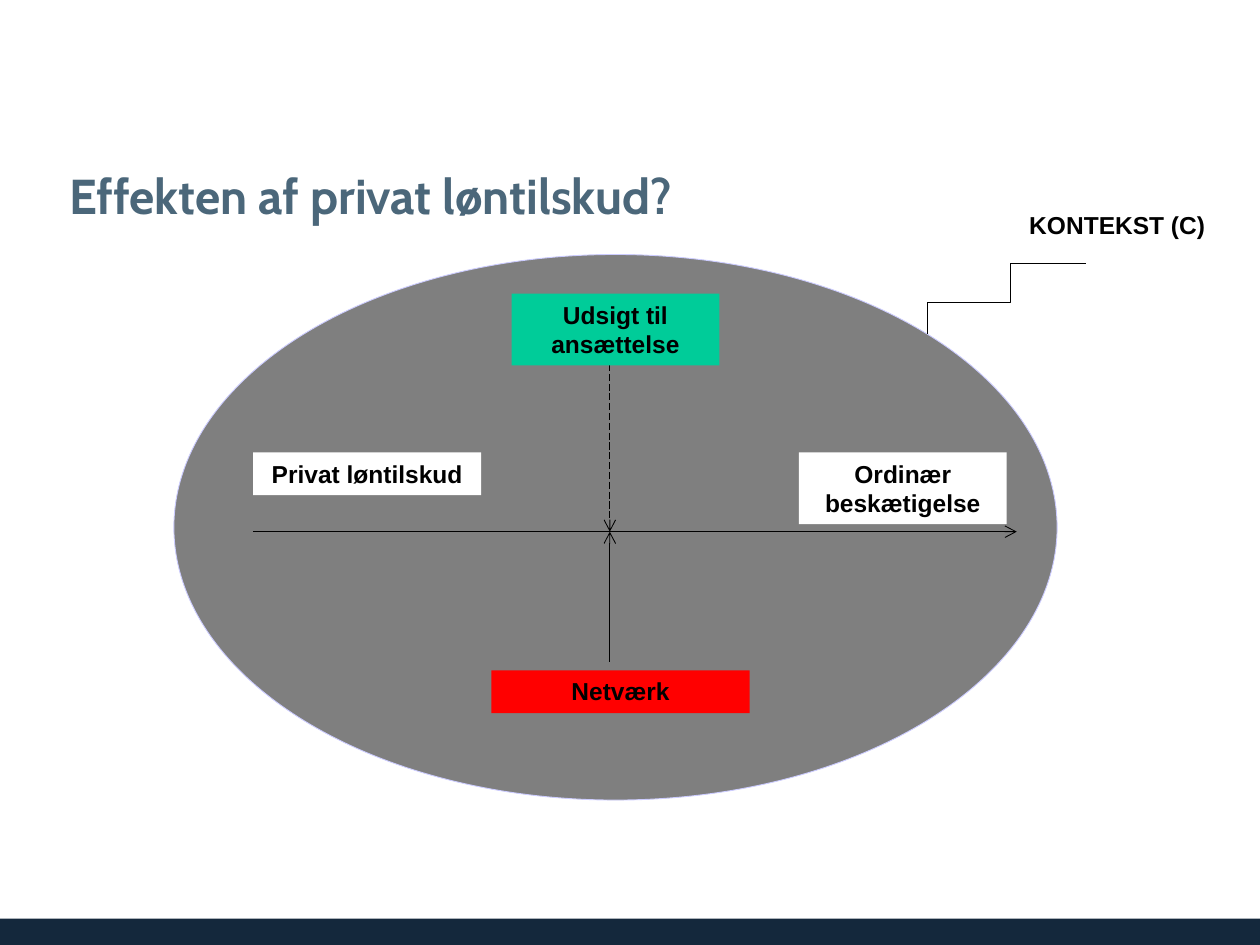
from lxml.etree import SubElement
from pptx import Presentation
from pptx.dml.color import RGBColor
from pptx.enum.dml import MSO_LINE
from pptx.enum.shapes import MSO_CONNECTOR, MSO_SHAPE
from pptx.enum.text import MSO_ANCHOR, MSO_AUTO_SIZE, PP_ALIGN
from pptx.oxml.ns import qn
from pptx.util import Inches, Pt

# Content
TITLE = "Effekten af privat løntilskud?"
AXIS_X, AXIS_Y = 4.84, 4.22
# text, (left, top, width, height), fill, alignment
LABELS = [
    ("Privat løntilskud", (2.01, 3.59, 1.81, 0.34), "FFFFFF", PP_ALIGN.CENTER),
    ("Ordinær\nbeskætigelse", (6.34, 3.59, 1.65, 0.57), "FFFFFF", PP_ALIGN.CENTER),
    ("Netværk", (3.9, 5.32, 2.05, 0.34), "FF0000", PP_ALIGN.CENTER),
    ("Udsigt til ansættelse", (4.06, 2.33, 1.65, 0.57), "00CC99", PP_ALIGN.CENTER),
    ("KONTEKST (C)", (8.07, 1.62, 1.65, 0.34), "FFFFFF", PP_ALIGN.LEFT),
]
# from x, from y, to x, to y, dash
ARROWS = [
    (2.01, AXIS_Y, 8.07, AXIS_Y, None),
    (AXIS_X, 5.25, AXIS_X, AXIS_Y, None),
    (AXIS_X, 2.81, AXIS_X, AXIS_Y, MSO_LINE.LONG_DASH),
]


def color(value):
    return RGBColor.from_string(value)


def add_block(slide, kind, box, fill):
    block = slide.shapes.add_shape(kind, *map(Inches, box))
    block.shadow.inherit = False
    block.fill.solid()
    block.fill.fore_color.rgb = color(fill)
    block.line.fill.background()
    return block


def add_label(slide, text, box, fill, alignment):
    frame = add_block(slide, MSO_SHAPE.RECTANGLE, box, fill).text_frame
    frame.text = text
    frame.word_wrap = True
    frame.vertical_anchor = MSO_ANCHOR.TOP
    frame.auto_size = MSO_AUTO_SIZE.SHAPE_TO_FIT_TEXT
    for paragraph in frame.paragraphs:
        paragraph.alignment = alignment
        font = paragraph.font
        font.name, font.size, font.bold = "Arial", Pt(14), True
        font.color.rgb = color("000000")


def add_line(slide, kind, ends):
    line = slide.shapes.add_connector(kind, *map(Inches, ends))
    line.line.color.rgb = color("000000")
    line.line.width = Pt(0.5)
    SubElement(line._element.spPr, qn("a:effectLst"))
    return line


def add_arrow(slide, *ends, dash):
    arrow = add_line(slide, MSO_CONNECTOR.STRAIGHT, ends)
    if dash:
        arrow.line.dash_style = dash
    SubElement(arrow.line._get_or_add_ln(), qn("a:tailEnd"), type="arrow")


def add_context_line(slide):
    # Four-part elbow, turned a quarter so that it leaves the ellipse upwards
    elbow = add_line(slide, MSO_CONNECTOR.ELBOW, (8.27, 3.0, 7.71, 1.74))
    properties = elbow._element.spPr
    properties.find(qn("a:xfrm")).set("rot", "5400000")
    geometry = properties.find(qn("a:prstGeom"))
    geometry.set("prst", "bentConnector4")
    adjustments = geometry.find(qn("a:avLst"))
    for name, value in (("adj1", 45000), ("adj2", 52100)):
        SubElement(adjustments, qn("a:gd"), name=name, fmla=f"val {value}")


def main():
    deck = Presentation()
    deck.slide_width, deck.slide_height = Inches(10), Inches(7.5)
    slide = deck.slides.add_slide(deck.slide_layouts[5])

    # Title
    title = slide.shapes.title
    title.left, title.top, title.width, title.height = map(Inches, (0.51, 1.17, 8.99, 0.75))
    frame = title.text_frame
    frame.text = TITLE
    frame.word_wrap = True
    frame.auto_size = MSO_AUTO_SIZE.NONE
    frame.vertical_anchor = MSO_ANCHOR.MIDDLE
    frame.margin_left, frame.margin_right = Inches(0.04), Inches(0.08)
    heading = frame.paragraphs[0]
    heading.alignment = PP_ALIGN.LEFT
    heading.font.name, heading.font.size, heading.font.bold = "Cabin", Pt(28), True
    heading.font.color.rgb = color("4B677A")

    # Footer band and context ellipse
    add_block(slide, MSO_SHAPE.RECTANGLE, (0, 7.29, 10, 0.21), "14283C")
    context = add_block(slide, MSO_SHAPE.OVAL, (1.38, 2.02, 7.01, 4.33), "000000")
    context.line.color.rgb = color("CCCCFF")
    context.line.width = Pt(0.5)
    fill_color = context._element.spPr.find(qn("a:solidFill"))[0]
    SubElement(fill_color, qn("a:alpha"), val="50000")

    # Arrows, context line and labels
    for *ends, dash in ARROWS:
        add_arrow(slide, *ends, dash=dash)
    add_context_line(slide)
    for label in LABELS:
        add_label(slide, *label)

    deck.save("out.pptx")


if __name__ == "__main__":
    main()
